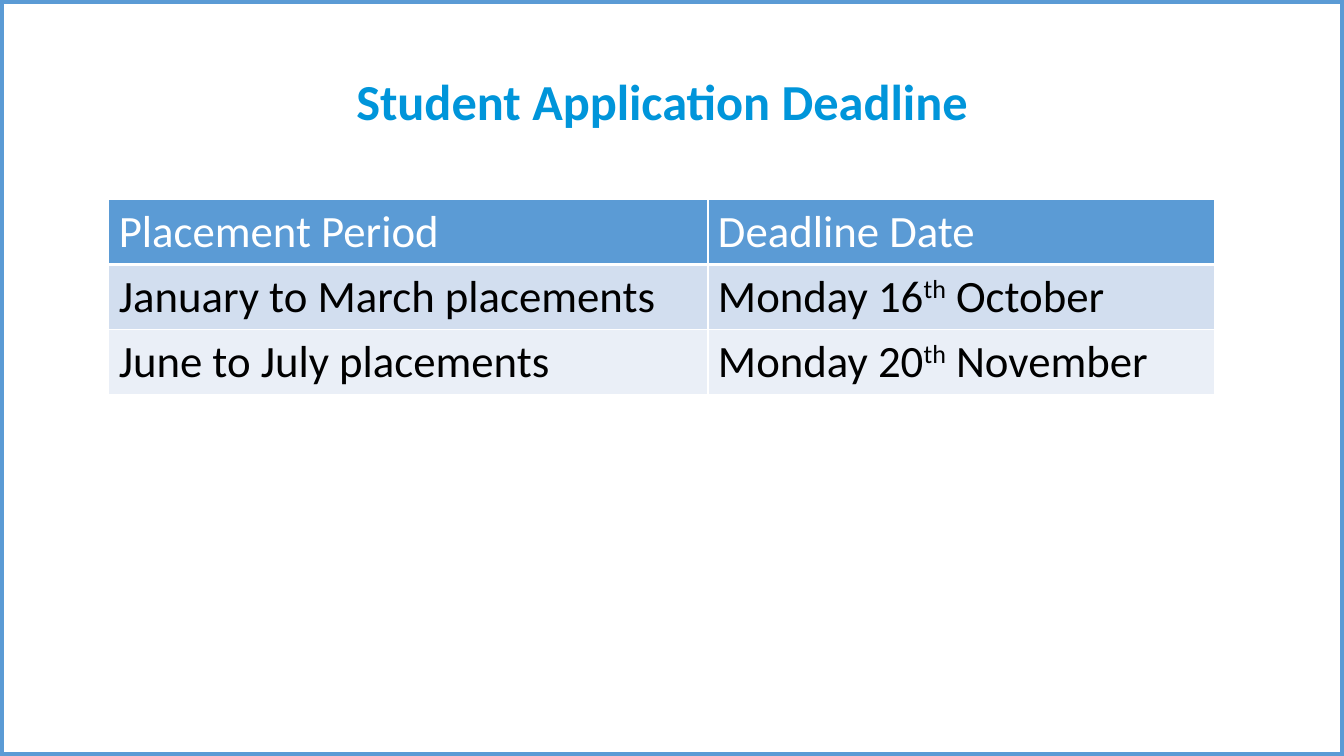
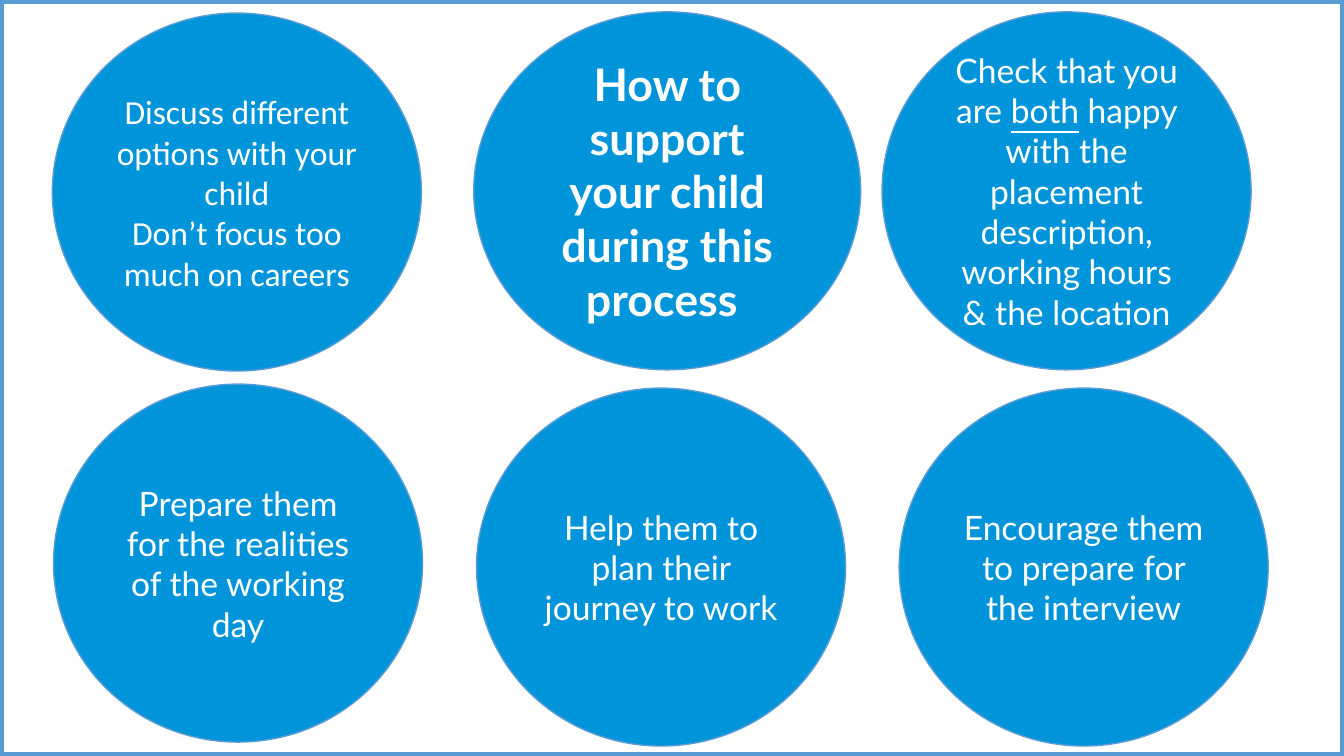
import math
import pptx
import pptx.util
import pptx.dml.color
import pptx.enum.shapes
import pptx.enum.text
import pptx.oxml
import pptx.oxml.ns

Cm = pptx.util.Cm
Pt = pptx.util.Pt
RGBColor = pptx.dml.color.RGBColor
Shape = pptx.enum.shapes.MSO_SHAPE
Align = pptx.enum.text.PP_ALIGN
Anchor = pptx.enum.text.MSO_ANCHOR
Fit = pptx.enum.text.MSO_AUTO_SIZE

WHITE = RGBColor(0xFF, 0xFF, 0xFF)
BLACK = RGBColor(0, 0, 0)
CYAN = RGBColor(0x00, 0x95, 0xDA)
BLUE = RGBColor(0x5B, 0x9B, 0xD5)
PALE = RGBColor(0xD2, 0xDE, 0xEF)
LIGHT = RGBColor(0xEA, 0xEF, 0xF7)

WIDE, HIGH = 33.87, 19.05
BODY, ROUND = "Calibri", "Lato"

ROWS = [
    (["Placement Period"], ["Deadline Date"]),
    (["January to March placements"], ["Monday 16", ("th", "sup"), " October"]),
    (["June to July placements"], ["Monday 20", ("th", "sup"), " November"]),
]
HEAD = "How to support your child during this process "
TIPS = [
    (1.35, 9.68, ROUND, [["Prepare them for the realities of the working day"]]),
    (1.32, 0.33, BODY, [["Discuss different options with your child"],
                        ["Don’t focus too much on careers"]]),
    (22.66, 9.78, ROUND, [["Encourage them to prepare for the interview"]]),
    (22.23, 0.3, ROUND, [["Check that you are ", ("both", "under"),
                          " happy with the placement description, "
                          "working hours & the location"]]),
    (12.01, 9.78, ROUND, [["Help them to plan their journey to work"]]),
]


def write(frame, paras, face, size, color, bold=False, align=Align.CENTER):
    for i, parts in enumerate(paras):
        para = frame.paragraphs[0] if i == 0 else frame.add_paragraph()
        para.alignment = align
        for part in parts:
            text, mark = (part, None) if isinstance(part, str) else part
            run = para.add_run()
            run.text = text
            font = run.font
            font.name, font.size, font.bold = face, Pt(size), bold
            font.color.rgb = color
            if mark == "under":
                font.underline = True
            elif mark == "sup":
                run._r.get_or_add_rPr().set("baseline", "30000")


def place(shape, box):
    shape.left, shape.top, shape.width, shape.height = map(Cm, box)


def start(deck):
    slide = deck.slides.add_slide(deck.slide_layouts[5])
    edge = slide.shapes.add_shape(Shape.RECTANGLE, 0, 0, Cm(WIDE), Cm(HIGH))
    edge.shadow.inherit = False
    edge.fill.background()
    edge.line.color.rgb = BLUE
    edge.line.width = Pt(6)
    return slide


def title(slide, box, text, face, size, color):
    shape = slide.shapes.title
    place(shape, box)
    frame = shape.text_frame
    frame.word_wrap = True
    frame.auto_size = Fit.NONE
    frame.vertical_anchor = Anchor.MIDDLE
    write(frame, [[text]], face, size, color, True)
    slide.shapes._spTree.append(shape._element)


def border(cell, low):
    props = cell._tc.get_or_add_tcPr()
    for i, side in enumerate("LRTB"):
        width = Pt(low if side == "B" else 1)
        line = pptx.oxml.parse_xml(
            f'<a:ln{side} {pptx.oxml.ns.nsdecls("a")} w="{width}">'
            f'<a:solidFill><a:srgbClr val="{WHITE}"/></a:solidFill></a:ln{side}>')
        props.insert(i, line)


def table(slide, box, split):
    left, top, width, height = box
    shape = slide.shapes.add_table(len(ROWS), 2, *map(Cm, box))
    grid = shape.table
    grid.columns[0].width = Cm(split)
    grid.columns[1].width = Cm(width - split)
    for r, row in enumerate(ROWS):
        grid.rows[r].height = Cm(height / len(ROWS))
        for c, parts in enumerate(row):
            cell = grid.cell(r, c)
            cell.fill.solid()
            cell.fill.fore_color.rgb = (BLUE, PALE, LIGHT)[r]
            border(cell, 3 if r == 0 else 1)
            write(cell.text_frame, [parts], BODY, 32,
                  WHITE if r == 0 else BLACK, align=Align.LEFT)


def disc(slide, box):
    shape = slide.shapes.add_shape(Shape.OVAL, *map(Cm, box))
    shape.shadow.inherit = False
    shape.fill.solid()
    shape.fill.fore_color.rgb = CYAN
    shape.line.color.rgb = BLUE
    shape.line.width = Pt(1)
    shape.text_frame.word_wrap = True
    shape.text_frame.vertical_anchor = Anchor.MIDDLE
    return shape


def centre(slide, box):
    left, top, width, height = box
    disc(slide, box)
    wide, high = width / math.sqrt(2), height / math.sqrt(2)
    inner = (left + (width - wide) / 2, top + (height - high) / 2, wide, high)
    title(slide, inner, HEAD, ROUND, 32, WHITE)


def dates(deck):
    slide = start(deck)
    title(slide, (6.38, 1.63, 20.62, 1.8), "Student Application Deadline",
          BODY, 36, CYAN)
    table(slide, (2.74, 5.03, 27.86, 4.83), 15.1)


def advice(deck):
    slide = start(deck)
    for left, top, face, paras in TIPS:
        shape = disc(slide, (left, top, 9.3, 9.02))
        write(shape.text_frame, paras, face, 24, WHITE)
    centre(slide, (11.94, 0.3, 9.75, 9.02))


def main():
    deck = pptx.Presentation()
    deck.slide_width, deck.slide_height = Cm(WIDE), Cm(HIGH)
    dates(deck)
    advice(deck)
    deck.save("out.pptx")


if __name__ == "__main__":
    main()
